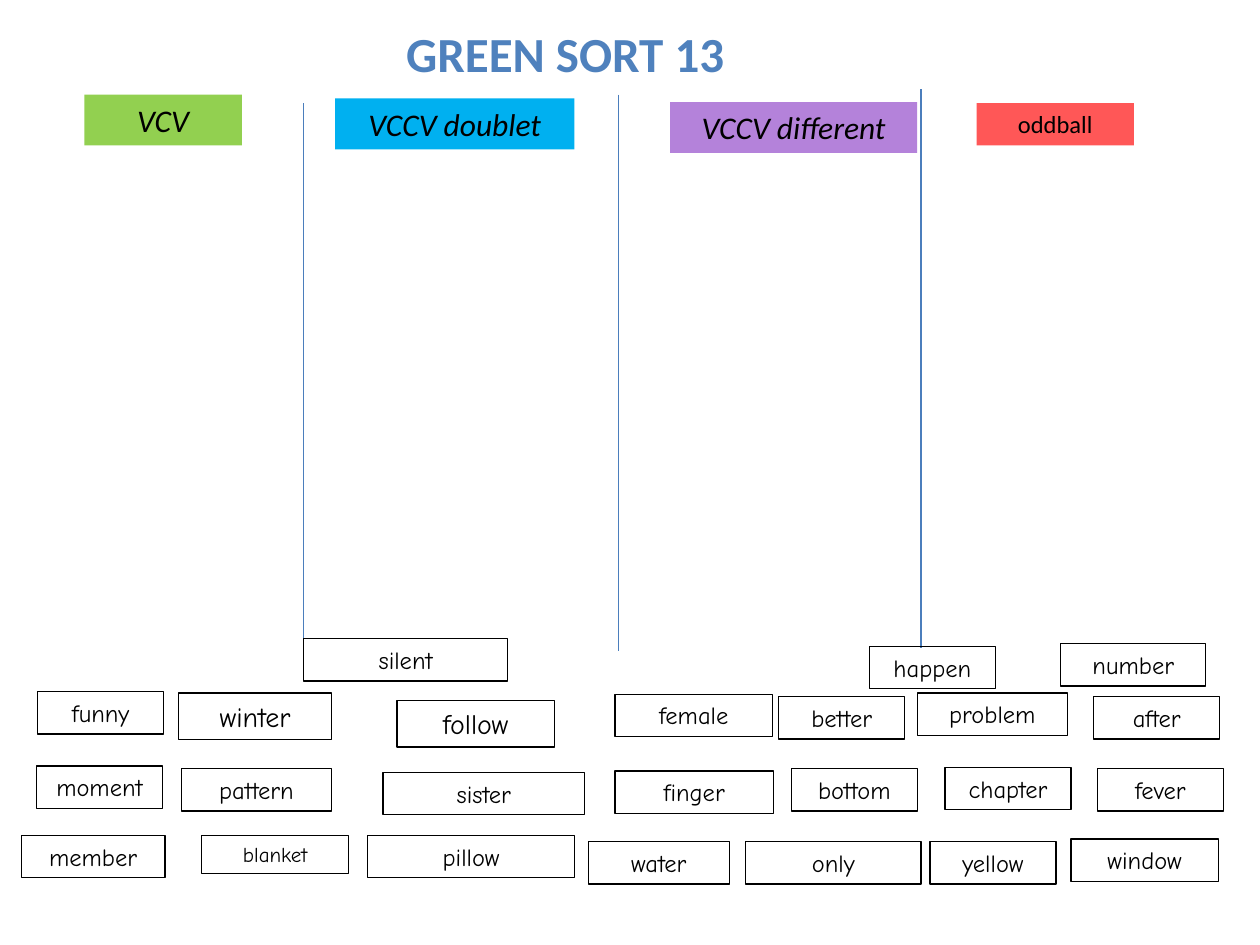
from dataclasses import dataclass
from typing import NamedTuple

from lxml.etree import SubElement
from pptx import Presentation
from pptx.dml.color import RGBColor
from pptx.enum.shapes import MSO_CONNECTOR as Connectors, MSO_SHAPE as Shapes
from pptx.enum.text import MSO_ANCHOR as Anchor, MSO_AUTO_SIZE as AutoSize, PP_ALIGN as Align
from pptx.oxml.ns import qn
from pptx.shapes.autoshape import Shape
from pptx.shapes.connector import Connector
from pptx.slide import Slide
from pptx.util import Pt


@dataclass(frozen=True)
class Theme:
    heading_font: str = "Calibri"
    word_font: str = "Comic Neue"
    ink: str = "000000"
    title: str = "4F81BD"
    divider: str = "4B7EBC"
    green: str = "92D050"
    blue: str = "00B0F0"
    purple: str = "B482DA"
    red: str = "FF5757"
    small: int = 12
    body: int = 14
    large: int = 16
    heading: int = 18
    title_size: int = 28
    line: float = 0.75


THEME = Theme()
# Height of a one-line box for each type size
BOX_HEIGHT = {12: 21.8, 14: 24.2, 16: 26.6, 18: 29.1, 28: 41.2}


class Heading(NamedTuple):
    text: str
    left: float
    top: float
    width: float
    fill: str
    size: int = THEME.heading
    italic: bool = True


class Word(NamedTuple):
    text: str
    left: float
    top: float
    width: float = 72
    size: int = THEME.body


class Divider(NamedTuple):
    x: float
    top: float
    bottom: float


HEADINGS = [
    Heading("VCV", 48.2, 54, 90, THEME.green),
    Heading("VCCV doublet", 191.5, 56.2, 136.8, THEME.blue),
    Heading("VCCV different", 383, 58.3, 141.1, THEME.purple),
    Heading("oddball", 558, 59, 90, THEME.red, THEME.body, False),
]

LEFT_DIVIDER = Divider(173.5, 59, 377.1)
OTHER_DIVIDERS = [Divider(353.5, 54, 372.2), Divider(526.3, 51.1, 370.1)]

SILENT = Word("silent", 173.5, 365, 116.6)
OTHER_WORDS = [
    Word("happen", 496.8, 369.4),
    Word("number", 606.2, 367.9, 82.8),
    Word("funny", 21.6, 395.3),
    Word("winter", 102.2, 396, 87.1, THEME.large),
    Word("follow", 226.8, 400.3, 90, THEME.large),
    Word("female", 351.4, 396.7, 90),
    Word("better", 445, 398.2),
    Word("problem", 524.2, 396, 85.7),
    Word("after", 625, 398.2),
    Word("moment", 20.9, 437.8),
    Word("pattern", 103.7, 439.2, 85.7),
    Word("sister", 218.9, 441.4, 115.2),
    Word("finger", 351.4, 440.6, 90.7),
    Word("bottom", 452.2, 439.2),
    Word("chapter", 540, 438.5),
    Word("fever", 627.1, 439.2),
    Word("member", 12.2, 477.4, 82.1),
    Word("blanket", 115.2, 477.4, 84.2, THEME.small),
    Word("pillow", 210.2, 477.4, 118.1),
    Word("water", 336.2, 481, 80.6),
    Word("only", 426.2, 481, 100.1),
    Word("yellow", 531.4, 481),
    Word("window", 612, 479.5, 84.2),
]


def rgb(color: str) -> RGBColor:
    return RGBColor.from_string(color)


def write_line(box: Shape, text: str, font_name: str, size: int, color: str,
               bold: bool = False, italic: bool = False) -> None:
    """Fill a box with one centred line of text."""
    frame = box.text_frame
    frame.word_wrap = True
    frame.auto_size = AutoSize.SHAPE_TO_FIT_TEXT
    frame.vertical_anchor = Anchor.TOP
    paragraph = frame.paragraphs[0]
    paragraph.alignment = Align.CENTER
    run = paragraph.add_run()
    run.text = text
    font = run.font
    font.name, font.size = font_name, Pt(size)
    font.bold, font.italic = bold, italic
    font.color.rgb = rgb(color)


def add_card(slide: Slide, card: Heading | Word) -> Shape:
    """Add a rectangle at the card's place, without shadow, fill or line."""
    box = slide.shapes.add_shape(
        Shapes.RECTANGLE, Pt(card.left), Pt(card.top),
        Pt(card.width), Pt(BOX_HEIGHT[card.size]))
    box.shadow.inherit = False
    box.fill.background()
    box.line.fill.background()
    return box


def add_heading(slide: Slide, heading: Heading) -> None:
    box = add_card(slide, heading)
    box.fill.solid()
    box.fill.fore_color.rgb = rgb(heading.fill)
    write_line(box, heading.text, THEME.heading_font, heading.size, THEME.ink,
               italic=heading.italic)


def add_word(slide: Slide, word: Word) -> Shape:
    box = add_card(slide, word)
    box.line.color.rgb = rgb(THEME.ink)
    box.line.width = Pt(THEME.line)
    write_line(box, word.text, THEME.word_font, word.size, THEME.ink)
    return box


def add_divider(slide: Slide, divider: Divider) -> Connector:
    line = slide.shapes.add_connector(
        Connectors.STRAIGHT, Pt(divider.x), Pt(divider.top),
        Pt(divider.x), Pt(divider.bottom))
    line.line.color.rgb = rgb(THEME.divider)
    line.line.width = Pt(THEME.line)
    SubElement(line.element.spPr, qn("a:effectLst"))
    return line


def add_title(slide: Slide) -> None:
    size = THEME.title_size
    box = slide.shapes.add_textbox(Pt(157), Pt(10.1), Pt(331.9), Pt(BOX_HEIGHT[size]))
    write_line(box, "GREEN SORT 13", THEME.heading_font, size, THEME.title, bold=True)


def main() -> None:
    deck = Presentation()
    deck.slide_width, deck.slide_height = Pt(720), Pt(540)
    slide = deck.slides.add_slide(deck.slide_layouts[6])

    add_title(slide)
    for heading in HEADINGS:
        add_heading(slide, heading)
    left_divider = add_divider(slide, LEFT_DIVIDER)
    for divider in OTHER_DIVIDERS:
        add_divider(slide, divider)
    left_divider.end_connect(add_word(slide, SILENT), 1)
    for word in OTHER_WORDS:
        add_word(slide, word)

    deck.save("out.pptx")


if __name__ == "__main__":
    main()
